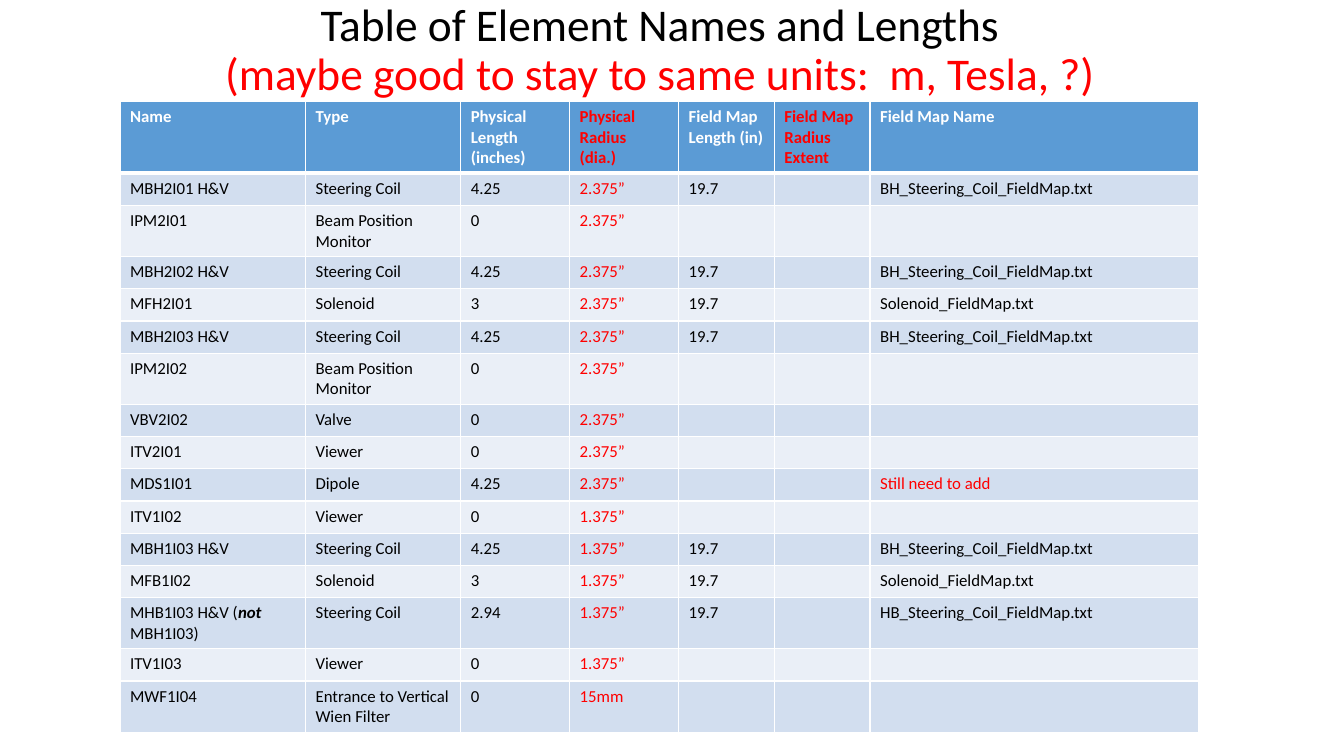
from dataclasses import dataclass

from lxml.etree import SubElement
from pptx import Presentation
from pptx.dml.color import RGBColor
from pptx.enum.text import MSO_ANCHOR, MSO_AUTO_SIZE, PP_ALIGN
from pptx.oxml import parse_xml
from pptx.oxml.ns import nsdecls, qn
from pptx.util import Inches, Pt


@dataclass(frozen=True)
class Theme:
    face: str = "Calibri"
    title: float = 32.4
    cell: float = 12
    ink: str = "000000"
    alert: str = "FF0000"
    paper: str = "FFFFFF"
    head: str = "5B9BD5"
    bands: tuple = ("D2DEEF", "EAEFF7")
    thin: float = 1
    thick: float = 3


WIDTHS = (1.84, 1.54, 1.08, 1.08, 0.95, 0.95, 3.26)
HEIGHTS = {0: 0.36, 2: 0.33, 6: 0.33, 13: 0.35}
RED_COLS = (3, 5)
TODO = "Still need to add"
HEADS = ("Name", "Type", "Physical Length (inches)", "Physical\nRadius\n(dia.)",
         "Field Map Length (in)", "Field Map Radius\nExtent", "Field Map Name")

COIL, BEAM, SOL, VIEW = "Steering Coil", "Beam Position Monitor", "Solenoid", "Viewer"
WIDE, SLIM = "2.375”", "1.375”"
BH_MAP = ("19.7", "", "BH_Steering_Coil_FieldMap.txt")
HB_MAP = ("19.7", "", "HB_Steering_Coil_FieldMap.txt")
SOL_MAP = ("19.7", "", "Solenoid_FieldMap.txt")
NO_MAP = ("", "", "")

PARTS = (
    ("MBH2I01 H&V", COIL, "4.25", WIDE, *BH_MAP),
    ("IPM2I01", BEAM, "0", WIDE, *NO_MAP),
    ("MBH2I02 H&V", COIL, "4.25", WIDE, *BH_MAP),
    ("MFH2I01", SOL, "3", WIDE, *SOL_MAP),
    ("MBH2I03 H&V", COIL, "4.25", WIDE, *BH_MAP),
    ("IPM2I02", BEAM, "0", WIDE, *NO_MAP),
    ("VBV2I02", "Valve", "0", WIDE, *NO_MAP),
    ("ITV2I01", VIEW, "0", WIDE, *NO_MAP),
    ("MDS1I01", "Dipole", "4.25", WIDE, "", "", TODO),
    ("ITV1I02", VIEW, "0", SLIM, *NO_MAP),
    ("MBH1I03 H&V", COIL, "4.25", SLIM, *BH_MAP),
    ("MFB1I02", SOL, "3", SLIM, *SOL_MAP),
    ("MHB1I03 H&V (*not* MBH1I03)", COIL, "2.94", SLIM, *HB_MAP),
    ("ITV1I03", VIEW, "0", SLIM, *NO_MAP),
    ("MWF1I04", "Entrance to Vertical Wien Filter", "0", "15mm", *NO_MAP),
)


class Deck:
    def __init__(self, theme):
        self.theme = theme
        self.file = Presentation()
        self.file.slide_width = Inches(13.33)
        self.file.slide_height = Inches(7.5)
        self.slide = self.file.slides.add_slide(self.file.slide_layouts[5])

    def title(self, lines, left, top, width, height):
        box = self.slide.shapes.title
        box.left, box.top = Inches(left), Inches(top)
        box.width, box.height = Inches(width), Inches(height)
        frame = box.text_frame
        frame.word_wrap = True
        frame.auto_size = MSO_AUTO_SIZE.NONE
        frame.vertical_anchor = MSO_ANCHOR.MIDDLE
        para = frame.paragraphs[0]
        para.alignment = PP_ALIGN.CENTER
        para.line_spacing = 0.9
        para.font.name = self.theme.face
        para.font.size = Pt(self.theme.title)
        for i, (text, color) in enumerate(lines):
            if i:
                para.add_line_break()
            run = para.add_run()
            run.text = text
            run.font.color.rgb = RGBColor.from_string(color)

    def table(self, rows, widths, left, top):
        heights = [HEIGHTS.get(i, 0.32) for i in range(len(rows))]
        grid = self.slide.shapes.add_table(
            len(rows), len(widths), Inches(left), Inches(top),
            Inches(sum(widths)), Inches(sum(heights))).table
        for col, width in zip(grid.columns, widths):
            col.width = Inches(width)
        for row, height in zip(grid.rows, heights):
            row.height = Inches(height)
        for r, row in enumerate(rows):
            for c, text in enumerate(row):
                self.cell(grid.cell(r, c), text, r, c)

    def cell(self, cell, text, r, c):
        theme, head = self.theme, r == 0
        cell.fill.solid()
        cell.fill.fore_color.rgb = RGBColor.from_string(
            theme.head if head else theme.bands[(r - 1) % 2])
        self.edges(cell, r)
        color = theme.paper if head else theme.ink
        if c in RED_COLS or text == TODO:
            color = theme.alert
        frame = cell.text_frame
        for i, line in enumerate(text.split("\n")):
            para = frame.add_paragraph() if i else frame.paragraphs[0]
            para.font.name = theme.face
            para.font.size = Pt(theme.cell)
            para.font.bold = head
            para.font.color.rgb = RGBColor.from_string(color)
            if not line:
                end = SubElement(para._p, qn("a:endParaRPr"))
                end.set("sz", str(int(theme.cell * 100)))
                continue
            for k, part in enumerate(line.split("*")):
                run = para.add_run()
                run.text = part
                if k % 2:
                    run.font.bold = run.font.italic = True

    def edges(self, cell, r):
        theme = self.theme
        props = cell._tc.get_or_add_tcPr()
        for i, side in enumerate("LRTB"):
            heavy = (r, side) in ((0, "B"), (1, "T"))
            width = Pt(theme.thick if heavy else theme.thin)
            props.insert(i, parse_xml(
                f'<a:ln{side} {nsdecls("a")} w="{width}"><a:solidFill>'
                f'<a:srgbClr val="{theme.paper}"/></a:solidFill></a:ln{side}>'))


def main():
    theme = Theme()
    deck = Deck(theme)
    deck.title((("Table of Element Names and Lengths", theme.ink),
                ("(maybe good to stay to same units:  m, Tesla, ?)", theme.alert)),
               0.93, 0, 11.23, 1.01)
    deck.table((HEADS, *PARTS), WIDTHS, 1.19, 1.01)
    deck.file.save("out.pptx")


if __name__ == "__main__":
    main()
